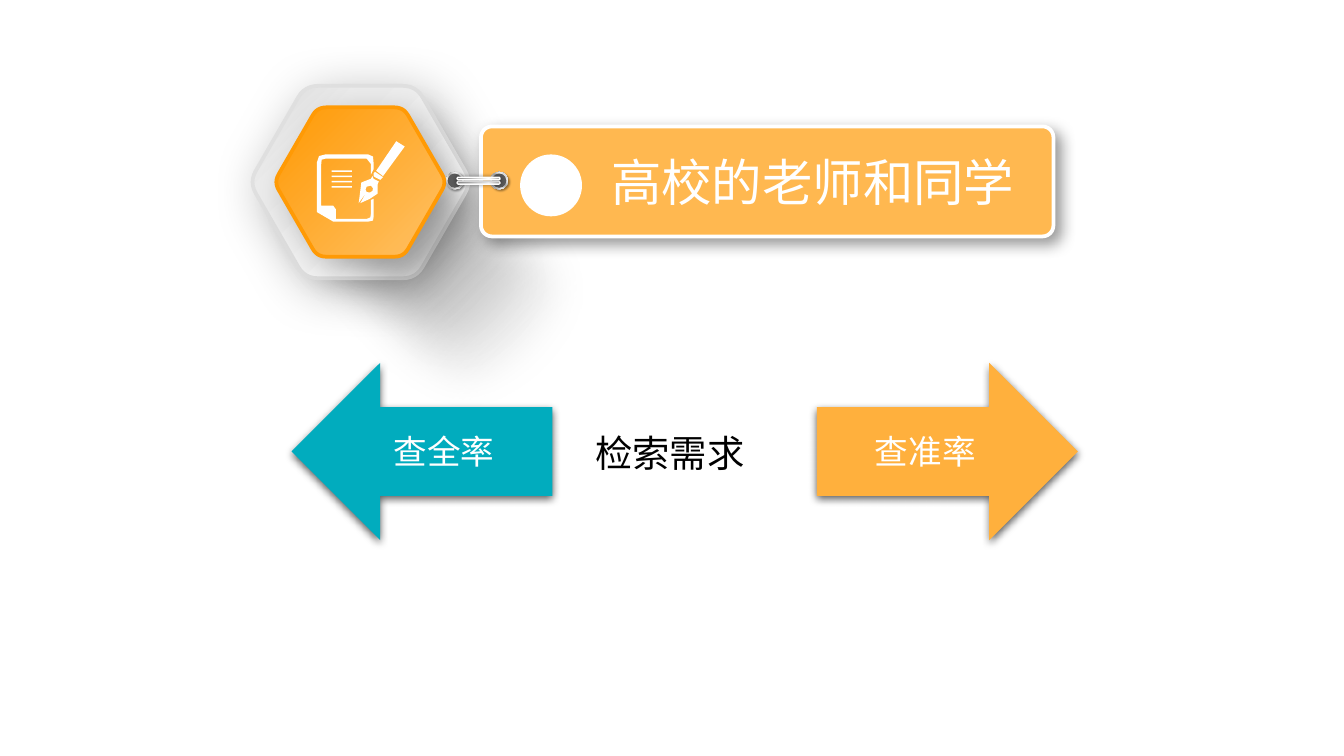
from math import cos, radians, sin

from lxml.etree import SubElement
from pptx import Presentation
from pptx.dml.color import RGBColor
from pptx.enum.shapes import MSO_SHAPE as SHAPE
from pptx.enum.text import MSO_ANCHOR as ANCHOR, MSO_AUTO_SIZE as AUTO, PP_ALIGN as ALIGN
from pptx.oxml.ns import qn
from pptx.util import Cm, Pt

FONT = "Noto Sans CJK SC"
WHITE = RGBColor(0xFF, 0xFF, 0xFF)
BLACK = RGBColor(0, 0, 0)
ORANGE = RGBColor(0xFF, 0xB0, 0x3D)
DEEP_ORANGE = RGBColor(0xFF, 0x9A, 0x05)
SOFT_ORANGE = RGBColor(0xFF, 0xC1, 0x65)
PLATE = RGBColor(0xFF, 0xB8, 0x50)
TEAL = RGBColor(0x01, 0xAC, 0xBE)
RIM = RGBColor(0xE0, 0xE0, 0xE0)
PALE = RGBColor(0xF2, 0xF2, 0xF2)
LIGHT = RGBColor(0xEC, 0xEC, 0xEC)
SILVER = RGBColor(0xD9, 0xD9, 0xD9)
GREY = RGBColor(0xA6, 0xA6, 0xA6)
MID_GREY = RGBColor(0x80, 0x80, 0x80)
SMOKE = RGBColor(0x6C, 0x6C, 0x6C)
HOLE = RGBColor(0x59, 0x59, 0x59)

# Gradients: angle, then stops of position, colour and opacity in percent
FRAME = (45, [(0, WHITE, 100), (73, LIGHT, 100), (100, SILVER, 100)])
CORE = (45, [(0, SOFT_ORANGE, 100), (100, DEEP_ORANGE, 100)])
METAL = (45, [(0, WHITE, 100), (17, GREY, 100), (35, PALE, 100),
              (55, GREY, 100), (75, PALE, 100), (100, GREY, 100)])
BAR = (90, [(0, MID_GREY, 100), (23, GREY, 100), (52, SILVER, 100),
            (74, WHITE, 100), (100, GREY, 100)])

# Pen and paper outlines in centimetres
SHAFT = [(7.49, 2.67), (7.11, 3.23), (7.24, 3.33), (7.65, 2.77)]
COLLAR = [(7.06, 3.28), (7.06, 3.33), (7.09, 3.35), (7.19, 3.4), (7.24, 3.35), (7.09, 3.25)]
NIB = [(7.04, 3.33), (7.01, 3.38), (6.83, 3.45), (6.78, 3.84), (6.93, 3.63), (6.91, 3.58),
       (6.93, 3.53), (7.01, 3.51), (7.05, 3.56), (7.04, 3.61), (6.99, 3.64), (6.93, 3.63),
       (6.81, 3.84), (6.99, 3.76), (7.14, 3.66), (7.14, 3.48), (7.16, 3.43), (7.06, 3.38)]
PAPER = [(7.01, 4.04), (7, 4.11), (6.93, 4.14), (6.35, 4.14), (6.35, 3.96), (6.3, 3.89),
         (6.07, 3.89), (6.07, 3.12), (6.08, 3.02), (6.15, 3), (6.93, 3), (7.01, 3.1),
         (7.01, 3.3), (7.06, 3.2), (7.06, 3.07), (7.05, 2.96), (6.96, 2.92), (6.15, 2.92),
         (6.03, 2.95), (5.99, 3.07), (5.99, 4.01), (6.3, 4.19), (6.96, 4.19), (7.05, 4.17),
         (7.06, 4.11), (7.06, 3.76), (7.01, 3.78)]


def rounded_hexagon(cx, cy, radius, cut, steps=6):
    """Outline of a regular hexagon whose corners are quadratic curves."""
    corners = [(cx + radius * cos(radians(a)), cy + radius * sin(radians(a)))
               for a in range(0, 360, 60)]
    f = cut / radius
    points = []
    for i, (x, y) in enumerate(corners):
        (px, py), (nx, ny) = corners[i - 1], corners[(i + 1) % 6]
        for t in (k / steps for k in range(steps + 1)):
            u, v = (1 - t) ** 2 * f, t ** 2 * f
            points.append((x + u * (px - x) + v * (nx - x),
                           y + u * (py - y) + v * (ny - y)))
    return points


class Deck:
    def __init__(self, width, height):
        self.prs = Presentation()
        self.prs.slide_width, self.prs.slide_height = Cm(width), Cm(height)
        self.s = self.prs.slides.add_slide(self.prs.slide_layouts[5])

    def color(self, parent, rgb, opacity):
        clr = SubElement(parent, qn("a:srgbClr"), val=str(rgb))
        SubElement(clr, qn("a:alpha"), val=str(opacity * 1000))

    def gradient(self, sp, angle, stops):
        sp.fill.background()
        blank = sp._element.spPr.find(qn("a:noFill"))
        grad = SubElement(sp._element.spPr, qn("a:gradFill"), rotWithShape="1")
        blank.getparent().replace(blank, grad)
        gs_list = SubElement(grad, qn("a:gsLst"))
        for pos, rgb, opacity in stops:
            self.color(SubElement(gs_list, qn("a:gs"), pos=str(pos * 1000)), rgb, opacity)
        SubElement(grad, qn("a:lin"), ang=str(angle * 60000), scaled="0")

    def effect(self, sp, shadow, soft):
        sp.shadow.inherit = False
        effects = sp._element.spPr.find(qn("a:effectLst"))
        if shadow:
            opacity, blur, dist, angle = shadow
            outer = SubElement(effects, qn("a:outerShdw"), blurRad=str(Pt(blur)),
                               dist=str(Pt(dist)), dir=str(angle * 60000),
                               algn="ctr", rotWithShape="0")
            self.color(outer, BLACK, opacity)
        if soft:
            SubElement(effects, qn("a:softEdge"), rad=str(Pt(soft)))

    def style(self, sp, fill, line=None, shadow=None, rot=0, soft=0):
        if isinstance(fill, RGBColor):
            sp.fill.solid()
            sp.fill.fore_color.rgb = fill
        else:
            self.gradient(sp, *fill)
        if line:
            sp.line.color.rgb, sp.line.width = line[0], Pt(line[1])
        else:
            sp.line.fill.background()
        self.effect(sp, shadow, soft)
        sp.rotation = rot
        return sp

    def shape(self, kind, x, y, w, h, fill, adj=None, **look):
        sp = self.s.shapes.add_shape(kind, Cm(x), Cm(y), Cm(w), Cm(h))
        if adj is not None:
            sp.adjustments[0] = adj
        return self.style(sp, fill, **look)

    def outline(self, points, fill, **look):
        pts = [(Cm(x), Cm(y)) for x, y in points]
        builder = self.s.shapes.build_freeform(*pts[0])
        builder.add_line_segments(pts[1:], close=True)
        return self.style(builder.convert_to_shape(), fill, **look)

    def set_text(self, sp, text, size, color, align=ALIGN.CENTER):
        sp.text_frame.text = text
        p = sp.text_frame.paragraphs[0]
        p.alignment = align
        font = p.runs[0].font
        font.size, font.name, font.color.rgb = Pt(size), FONT, color
        SubElement(p.runs[0]._r.get_or_add_rPr(), qn("a:ea"), typeface=FONT)

    def title(self, x, y, w, h, text, size, color):
        sp = self.s.shapes.title
        sp.left, sp.top, sp.width, sp.height = Cm(x), Cm(y), Cm(w), Cm(h)
        self.set_text(sp, text, size, color)
        sp.text_frame.auto_size = AUTO.NONE
        sp.text_frame.vertical_anchor = ANCHOR.MIDDLE
        self.s.shapes._spTree.append(sp._element)  # in front of the plate

    def label(self, x, y, w, h, text, size, color, indent):
        sp = self.s.shapes.add_textbox(Cm(x), Cm(y), Cm(w), Cm(h))
        self.set_text(sp, text, size, color, ALIGN.LEFT)
        sp.text_frame.word_wrap = True
        sp.text_frame.margin_left = Cm(indent)

    def arrow(self, kind, x, fill, text):
        sp = self.shape(kind, x, 6.86, 4.93, 3.35, fill, shadow=(63, 4.5, 1.5, 90))
        self.set_text(sp, text, 18, WHITE)
        sp.text_frame.vertical_anchor = ANCHOR.MIDDLE


def main():
    d = Deck(25.4, 14.29)

    # Hexagon badge: each layer lies on its own long shadow
    cx, cy = 6.81, 3.44
    for box, dark, mid, fill, radius, cut, line, shadow in [
        ((4.47, 2.21, 7.19, 4.95), 54, (33, SMOKE, 42), FRAME, 2.1, 0.25,
         (RIM, 2), (28, 28, 7, 45)),
        ((4.85, 2.54, 6.1, 3.99), 61, (37, SMOKE, 50), CORE, 1.63, 0.17,
         (DEEP_ORANGE, 2), (25, 20, 9, 45)),
    ]:
        fade = (0, [(0, BLACK, dark), mid, (100, SILVER, 0)])
        d.shape(SHAPE.ROUNDED_RECTANGLE, *box, fade, adj=0.5, rot=46, soft=20)
        d.outline(rounded_hexagon(cx, cy, radius, cut), fill,
                  line=line, shadow=shadow, rot=180)

    # Title plate
    d.shape(SHAPE.ROUNDED_RECTANGLE, 9.09, 2.39, 10.82, 2.08, PLATE, adj=0.1,
            line=(WHITE, 2), shadow=(40, 8, 4, 45))

    # Rings and bars that link the badge and the plate
    for x in (9.27, 8.43):
        d.shape(SHAPE.OVAL, x, 3.25, 0.33, 0.33, METAL, rot=270, shadow=(40, 1, 1, 45))
        d.shape(SHAPE.OVAL, x + 0.03, 3.28, 0.27, 0.27, HOLE, rot=270)
    for y in (3.05, 2.97):
        d.shape(SHAPE.ROUNDED_RECTANGLE, 9.02, y, 0.05, 0.81, BAR, adj=0.5, rot=270,
                line=(WHITE, 0.75), shadow=(40, 2, 0, 0))

    d.title(10.85, 2.72, 9.02, 1.4, "高校的老师和同学", 27, WHITE)

    # Pen and paper icon
    for points in (SHAFT, COLLAR, NIB, PAPER):
        d.outline(points, WHITE)
    for i in range(4):
        d.shape(SHAPE.RECTANGLE, 6.27, 3.22 + 0.1 * i, 0.38, 0.03, WHITE)

    # Dot on the plate
    d.shape(SHAPE.OVAL, 9.83, 2.92, 1.17, 1.17, WHITE)

    # Two opposite goals around the need
    d.arrow(SHAPE.RIGHT_ARROW, 15.44, ORANGE, "查准率")
    d.arrow(SHAPE.LEFT_ARROW, 5.51, TEAL, "查全率")
    d.label(10.52, 8, 5.64, 1.12, "检索需求", 20, BLACK, indent=0.73)

    d.prs.save("out.pptx")


if __name__ == "__main__":
    main()
